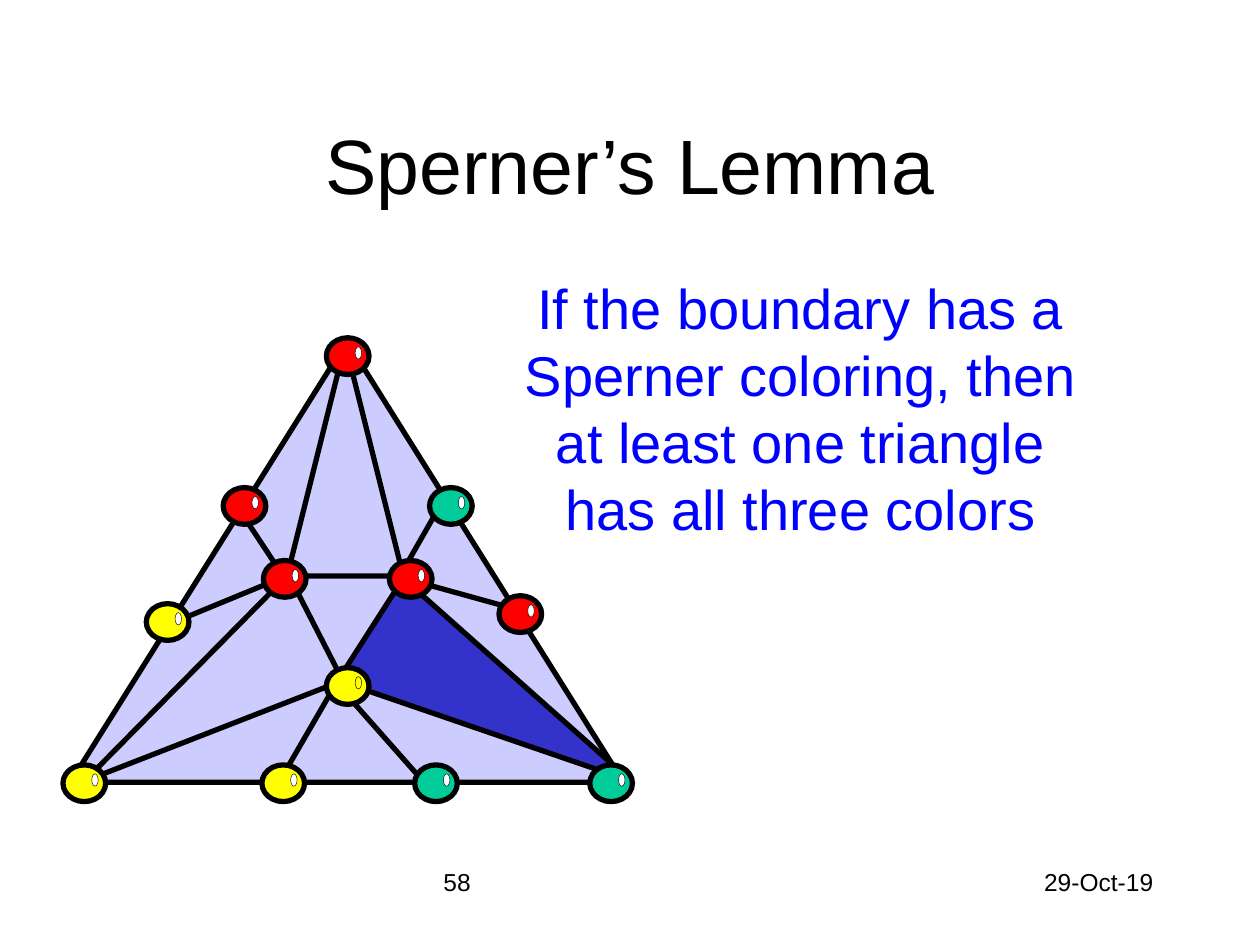
"""Build a slide stating Sperner's lemma beside a coloured triangulation."""
import pptx
import pptx.dml.color
import pptx.enum.shapes
import pptx.enum.text
import pptx.oxml
import pptx.oxml.ns
import pptx.util

Cm = pptx.util.Cm
Pt = pptx.util.Pt
SHAPES = pptx.enum.shapes.MSO_SHAPE
ALIGN = pptx.enum.text.PP_ALIGN
RED, GREEN, YELLOW = "FF0000", "00CC99", "FFFF00"


def paint(shape, fill, line_width):
    """Give a shape a fill, or none, and a black outline without shadow."""
    shape.shadow.inherit = False
    if fill:
        shape.fill.solid()
        shape.fill.fore_color.rgb = pptx.dml.color.RGBColor.from_string(fill)
    else:
        shape.fill.background()
    shape.line.color.rgb = pptx.dml.color.RGBColor.from_string("000000")
    shape.line.width = Pt(line_width)


def write(shape, text, size, color, align):
    """Put one formatted run of text into a shape."""
    shape.text_frame.word_wrap = True
    para = shape.text_frame.paragraphs[0]
    para.alignment = align
    span = para.add_run()
    span.text = text
    span.font.name = "Arial"
    span.font.size = Pt(size)
    span.font.color.rgb = pptx.dml.color.RGBColor.from_string(color)


deck = pptx.Presentation()
deck.slide_width, deck.slide_height = Cm(25.4), Cm(19.05)
page = deck.slides.add_slide(deck.slide_layouts[5])

title = page.shapes.title
title.left, title.top, title.width, title.height = Cm(1.9), Cm(1.7), Cm(21.6), Cm(3.18)
title.text_frame.vertical_anchor = pptx.enum.text.MSO_ANCHOR.MIDDLE
write(title, "Sperner’s Lemma", 44, "000000", ALIGN.CENTER)

outer_triangle = page.shapes.add_shape(
    SHAPES.ISOSCELES_TRIANGLE, Cm(1.42), Cm(6.88), Cm(11.15), Cm(8.89))
paint(outer_triangle, "CCCCFF", 3)

inner_polygons = [
    ([(6.91, 13.72), (5.84, 11.63), (5.74, 11.66), (1.7, 15.75)], None),
    ([(8.13, 11.66), (6.81, 13.72), (12.73, 15.75)], "3333CC"),
    ([(5.79, 11.61), (8.13, 11.61), (6.96, 6.93)], None),
]
for corners, fill in inner_polygons:
    points = [(Cm(x), Cm(y)) for x, y in corners]
    builder = page.shapes.build_freeform(*points[0])
    builder.add_line_segments(points[1:], close=True)
    paint(builder.convert_to_shape(), fill, 3)

edges = {
    (6.78, 13.77): [(8.46, 15.67), (5.56, 15.88)],
    (8.05, 11.63): [(10.36, 12.27), (8.89, 10.16)],
    (5.72, 11.63): [(4.88, 10.36), (3.61, 12.5)],
}
for (start_x, start_y), ends in edges.items():
    for end_x, end_y in ends:
        edge = page.shapes.add_connector(
            pptx.enum.shapes.MSO_CONNECTOR.STRAIGHT,
            Cm(start_x), Cm(start_y), Cm(end_x), Cm(end_y))
        edge.line.color.rgb = pptx.dml.color.RGBColor.from_string("000000")
        edge.line.width = Pt(3)
        properties = edge.element.find(pptx.oxml.ns.qn("p:spPr"))
        properties.append(pptx.oxml.parse_xml(
            f'<a:effectLst {pptx.oxml.ns.nsdecls("a")}/>'))

vertices = [
    (11.89, 15.42, GREEN, "FFFFFF"),
    (8.36, 15.42, GREEN, "FFFFFF"),
    (5.28, 15.42, YELLOW, "FFFFFF"),
    (1.27, 15.42, YELLOW, "FFFFFF"),
    (10.06, 12.01, RED, "FFFFFF"),
    (2.95, 12.17, YELLOW, "FFFFFF"),
    (6.58, 13.46, YELLOW, YELLOW),
    (7.85, 11.3, RED, "FFFFFF"),
    (5.31, 11.3, RED, "FFFFFF"),
    (6.58, 6.81, RED, "FFFFFF"),
    (8.66, 9.83, GREEN, "FFFFFF"),
    (4.5, 9.83, RED, "FFFFFF"),
]
for left, top, color, glint_color in vertices:
    ball = page.shapes.add_shape(SHAPES.OVAL, Cm(left), Cm(top), Cm(0.86), Cm(0.74))
    paint(ball, color, 3)
    glint = page.shapes.add_shape(
        SHAPES.OVAL, Cm(left + 0.58), Cm(top + 0.18), Cm(0.13), Cm(0.25))
    paint(glint, glint_color, 0.25)

lemma = ("If the boundary has a Sperner coloring, then "
         "at least one triangle has all three colors")
texts = [
    (10.16, 5.38, 11.96, 5.74, lemma, 32, "0000FF", ALIGN.CENTER),
    (8.69, 17.35, 8.05, 1.27, "58", 14, "000000", ALIGN.LEFT),
    (18.21, 17.35, 5.29, 1.27, "29-Oct-19", 14, "000000", ALIGN.RIGHT),
]
for left, top, width, height, text, size, color, align in texts:
    box = page.shapes.add_textbox(Cm(left), Cm(top), Cm(width), Cm(height))
    write(box, text, size, color, align)

deck.save("out.pptx")
